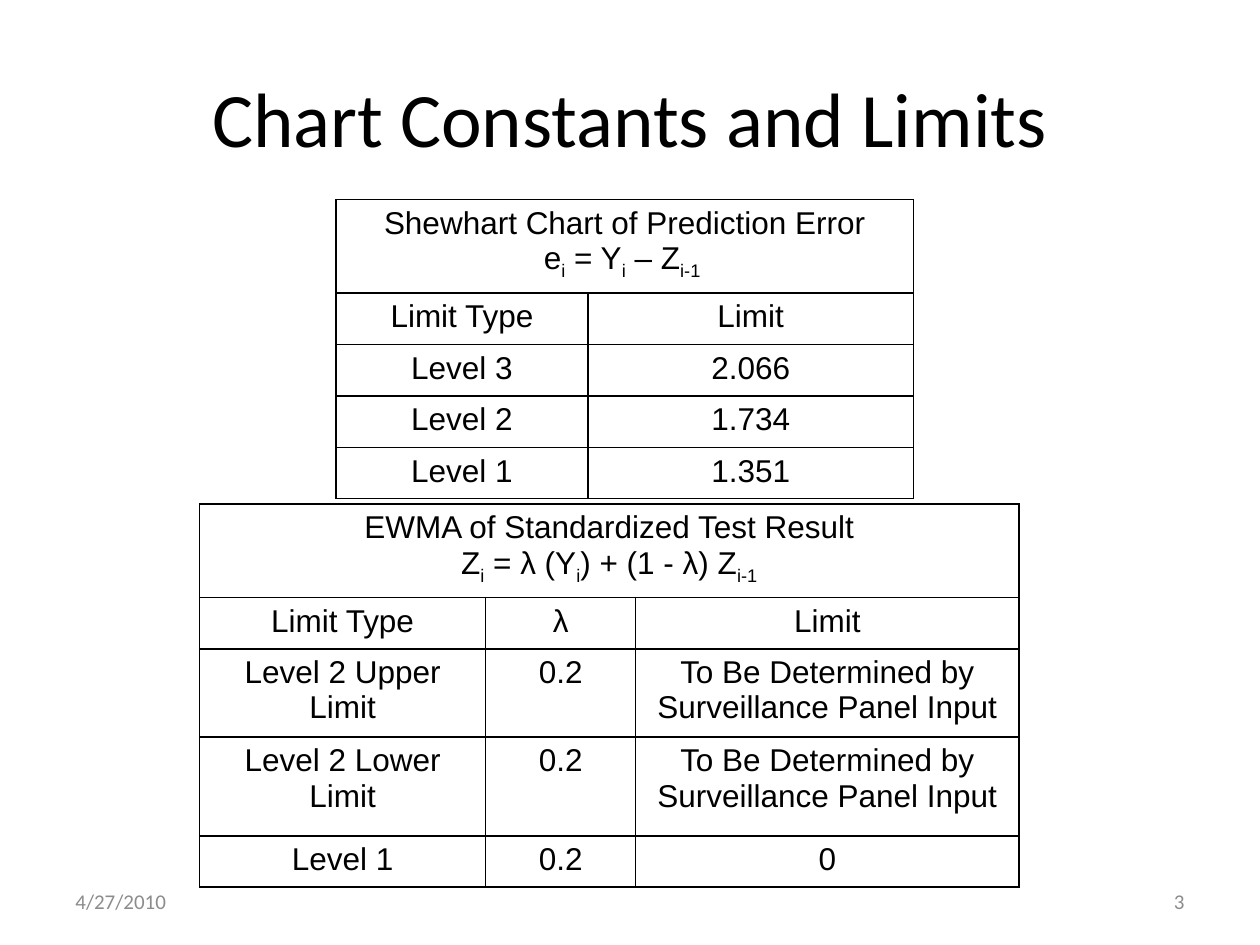
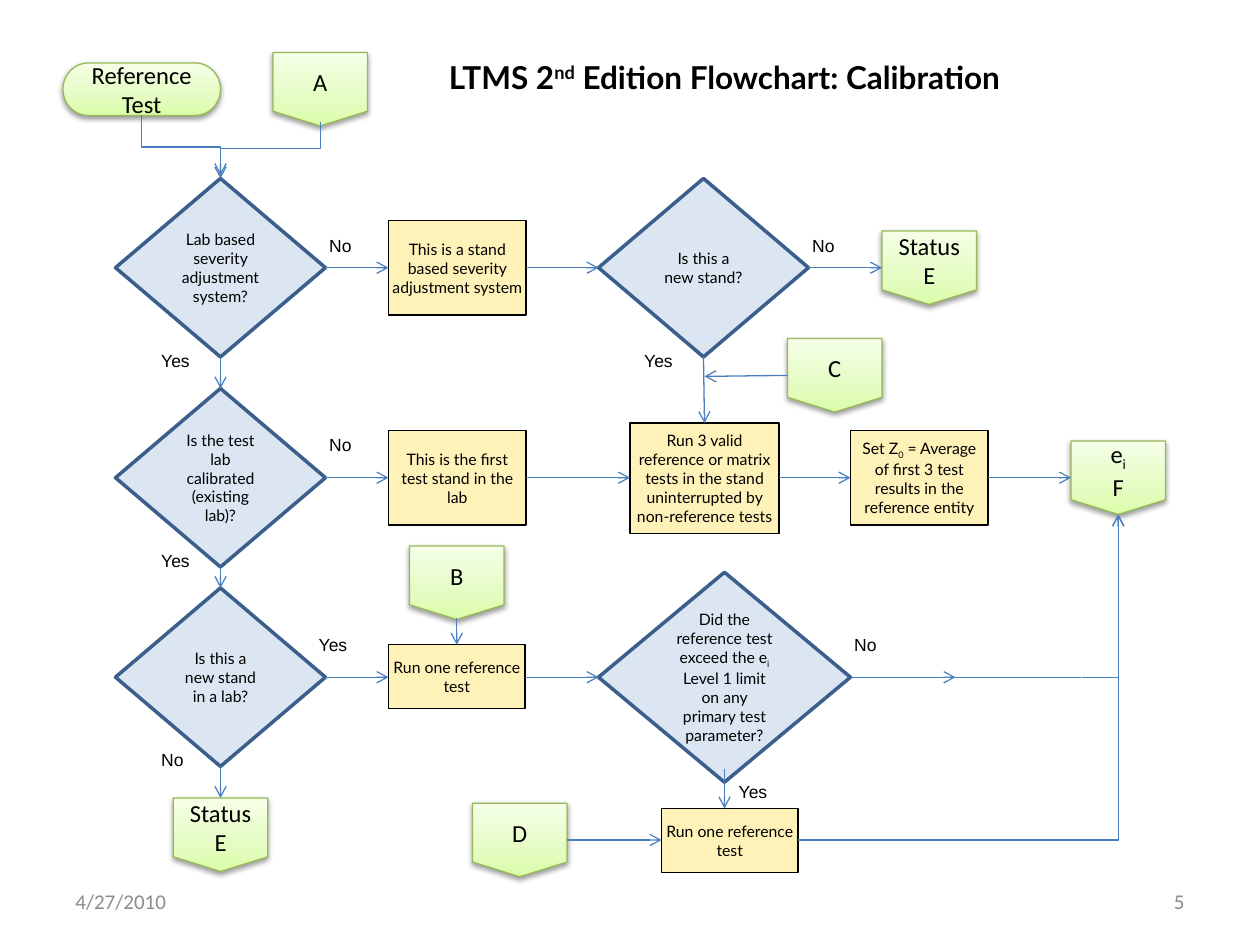
"""Build the chart limits slide and the calibration flowchart slide."""
from copy import deepcopy
from lxml.etree import SubElement
from pptx import Presentation
from pptx.dml.color import RGBColor
from pptx.enum.shapes import MSO_CONNECTOR, MSO_SHAPE
from pptx.enum.text import MSO_ANCHOR, PP_ALIGN
from pptx.oxml.ns import qn
from pptx.util import Emu, Inches, Pt

COLORS = {
    "text": "000000", "footer": "8C8C8C", "paper": "FFFFFF", "process": "FFF2B9",
    "decision": "DCE6F2", "decision_line": "3A5F8C", "link_line": "98B955",
    "arrow": "4B7EBC",
}
LINK_STOPS = [(0, "DAFDA7"), (0.35, "E4FCC2"), (1, "F5FFE7")]
COLUMNS, ROWS = 120, 90
CELL = Inches(10) // COLUMNS

FRAMES = {
    "plain": {"word_wrap": True, "vertical_anchor": MSO_ANCHOR.MIDDLE},
    "label": {"word_wrap": True, "margin_left": Inches(0.03), "margin_top": Inches(0.03),
              "margin_right": 0, "margin_bottom": 0},
    "tight": {"word_wrap": True, "vertical_anchor": MSO_ANCHOR.MIDDLE,
              "margin_left": Inches(0.03), "margin_right": Inches(0.03),
              "margin_top": Inches(0.02), "margin_bottom": Inches(0.02)},
}
CENTER, LEFT, RIGHT = PP_ALIGN.CENTER, PP_ALIGN.LEFT, PP_ALIGN.RIGHT
STYLES = {
    "title": {"font": {"name": "Calibri", "size": Pt(44)}, "align": CENTER, "frame": "plain"},
    "heading": {"font": {"name": "Lato", "size": Pt(18), "bold": True}, "align": CENTER,
                "frame": "tight", "shift": 30000, "shape": MSO_SHAPE.RECTANGLE, "fill": "paper"},
    "date": {"font": {"name": "Calibri", "size": Pt(12)}, "align": LEFT,
             "frame": "plain", "color": "footer"},
    "number": {"font": {"name": "Calibri", "size": Pt(12)}, "align": RIGHT,
               "frame": "plain", "color": "footer"},
    "table": {"font": {"name": "Arial", "size": Pt(18)}, "align": CENTER, "frame": None},
    "label": {"font": {"name": "Arial", "size": Pt(10)}, "align": LEFT, "frame": "label"},
    "process": {"font": {"name": "Lato", "size": Pt(9)}, "align": CENTER, "frame": "tight",
                "shape": MSO_SHAPE.FLOWCHART_PROCESS, "fill": "process",
                "line": ("text", 0.75)},
    "decision": {"font": {"name": "Lato", "size": Pt(9)}, "align": CENTER, "frame": "plain",
                 "shape": MSO_SHAPE.FLOWCHART_DECISION, "fill": "decision",
                 "line": ("decision_line", 2)},
    "link": {"font": {"name": "Calibri", "size": Pt(14)}, "align": CENTER, "frame": "plain",
             "shape": MSO_SHAPE.FLOWCHART_OFFPAGE_CONNECTOR, "fill": "gradient",
             "line": ("link_line", 0.75)},
}
STYLES["terminator"] = {**STYLES["link"], "shape": MSO_SHAPE.FLOWCHART_TERMINATOR}


def grid(*values):
    """Turn grid columns and rows into slide lengths."""
    return [Emu(round(value * CELL)) for value in values]


def write(frame, text, style):
    """Fill a text frame; pieces between bars are raised or lowered."""
    for name, value in FRAMES.get(style["frame"], {}).items():
        setattr(frame, name, value)
    for index, line in enumerate(text.split("\n")):
        paragraph = frame.add_paragraph() if index else frame.paragraphs[0]
        paragraph.alignment = style["align"]
        for position, piece in enumerate(line.split("|")):
            if not piece:
                continue
            run = paragraph.add_run()
            run.text = piece
            for name, value in style["font"].items():
                setattr(run.font, name, value)
            run.font.color.rgb = RGBColor.from_string(COLORS[style.get("color", "text")])
            if position % 2:
                run.font._element.set("baseline", str(style.get("shift", -25000)))


presentation = Presentation()
presentation.slide_width, presentation.slide_height = grid(COLUMNS, ROWS)
limits_slide, flowchart_slide = [
    presentation.slides.add_slide(presentation.slide_layouts[6]) for _ in range(2)]

DIAMOND = (20, 17)
PROCESS = (13.1, 9)
RUN = (13, 6.1)
LINK = (9, 7)
LABEL = (4.8, 2.4)
FOOTER = (28, 4.8)

limits_items = [("title", "Chart Constants and Limits", 6, 3.6, (108, 15))]
flowchart_items = [
    ("process", "Run 3 valid reference or matrix tests in the stand uninterrupted "
                "by non-reference tests", 60, 40.3, (14.2, 10.5)),
    ("heading", "LTMS 2|nd| Edition Flowchart: Calibration", 38, 4.3, (62, 6)),
    ("decision", "Lab based severity adjustment system?", 11, 17, DIAMOND),
    ("decision", "Is the test lab calibrated (existing lab)?", 11, 37, DIAMOND),
    ("decision", "Is this a new stand in a lab?", 11, 56, DIAMOND),
    ("decision", "Is this a new stand?", 57, 17, DIAMOND),
    ("decision", "Did the reference test exceed the e|i| Level 1 limit on any primary "
                 "test parameter?", 57, 54.5, (24, 20)),
    ("process", "Set Z|0| = Average of first 3 test results in the reference entity",
     81, 41, PROCESS),
    ("process", "This is the first test stand in the lab", 37, 41, PROCESS),
    ("process", "This is a stand based severity adjustment system", 37, 21, PROCESS),
    ("process", "Run one reference test", 37, 61.4, RUN),
    ("process", "Run one reference test", 63, 77, RUN),
    ("link", "A", 26, 5, LINK),
    ("link", "Status\nE", 84, 22, LINK),
    ("link", "Status\nE", 16.5, 76, LINK),
    ("link", "C", 75, 32.25, LINK),
    ("link", "B", 39, 52, LINK),
    ("link", "e|i|\nF", 102, 42, LINK),
    ("link", "D", 45, 76.5, LINK),
    ("terminator", "Reference Test", 6, 6, (15, 5)),
]
answers = {
    "Yes": [(15, 33), (30, 60), (15, 52), (61, 33), (70, 74)],
    "No": [(15, 71), (81, 60), (31, 41), (77, 22), (31, 22)],
}
for answer, places in answers.items():
    flowchart_items += [("label", answer, left, top, LABEL) for left, top in places]

for slide, number, items in ((limits_slide, "3", limits_items),
                             (flowchart_slide, "5", flowchart_items)):
    footers = [("date", "4/27/2010", 6, 83.4, FOOTER), ("number", number, 86, 83.4, FOOTER)]
    for kind, text, left, top, size in items + footers:
        style = STYLES[kind]
        box = grid(left, top, *size)
        if "shape" not in style:
            write(slide.shapes.add_textbox(*box).text_frame, text, style)
            continue
        shape = slide.shapes.add_shape(style["shape"], *box)
        shape.shadow.inherit = False
        if style["fill"] == "gradient":
            shape.fill.gradient()
            shape.fill.gradient_angle = 90
            stop_list = shape._element.spPr.find(".//" + qn("a:gsLst"))
            stop_list.append(deepcopy(stop_list[0]))
            for stop, (position, color) in zip(shape.fill.gradient_stops, LINK_STOPS):
                stop.position = position
                stop.color.rgb = RGBColor.from_string(color)
            effects = shape._element.spPr.find(qn("a:effectLst"))
            shadow = SubElement(effects, qn("a:outerShdw"), blurRad=str(Pt(3.1)),
                                dist=str(Pt(1.6)), dir="5400000", rotWithShape="0")
            shadow_color = SubElement(shadow, qn("a:srgbClr"), val=COLORS["text"])
            SubElement(shadow_color, qn("a:alpha"), val="38000")
        else:
            shape.fill.solid()
            shape.fill.fore_color.rgb = RGBColor.from_string(COLORS[style["fill"]])
        if "line" in style:
            color, width = style["line"]
            shape.line.color.rgb = RGBColor.from_string(COLORS[color])
            shape.line.width = Pt(width)
        else:
            shape.line.fill.background()
        write(shape.text_frame, text, style)

PANEL = "To Be Determined by Surveillance Panel Input"
tables = [
    ((32, 19), (24, 31), (8.4, 4.9, 4.9, 4.9, 4.9), [
        ["Shewhart Chart of Prediction Error\ne|i| = Y|i| – Z|i-1 "],
        ["Limit Type", "Limit"],
        ["Level 3", "2.066"],
        ["Level 2", "1.734"],
        ["Level 1", "1.351"]]),
    ((19, 48), (27.25, 14.3, 36.5), (8.4, 4.9, 7.9, 9.4, 4.9), [
        ["EWMA of Standardized Test Result\nZ|i| = λ (Y|i|) + (1 - λ) Z|i-1"],
        ["Limit Type", "λ", "Limit"],
        ["Level 2 Upper Limit", "0.2", PANEL],
        ["Level 2 Lower Limit", "0.2", PANEL],
        ["Level 1", "0.2", "0"]]),
]
for corner, widths, heights, texts in tables:
    table = limits_slide.shapes.add_table(
        len(heights), len(widths), *grid(*corner, sum(widths), sum(heights))).table
    table.first_row = table.horz_banding = False
    for column, width in zip(table.columns, grid(*widths)):
        column.width = width
    for row, height in zip(table.rows, grid(*heights)):
        row.height = height
    for cell in table.iter_cells():
        properties = cell._tc.get_or_add_tcPr()
        for side in ("a:lnL", "a:lnR", "a:lnT", "a:lnB"):
            border = SubElement(properties, qn(side), w=str(Pt(1)))
            fill = SubElement(border, qn("a:solidFill"))
            SubElement(fill, qn("a:srgbClr"), val=COLORS["text"])
        cell.fill.background()
    table.cell(0, 0).merge(table.cell(0, len(widths) - 1))
    for row_index, row_texts in enumerate(texts):
        for column_index, text in enumerate(row_texts):
            write(table.cell(row_index, column_index).text_frame, text, STYLES["table"])

arrows = [
    ("straight", 21, 34, 21, 37), ("straight", 21, 54, 21, 56),
    ("straight", 21, 73, 21, 76), ("straight", 69, 73.2, 69, 77),
    ("straight", 43.5, 58.9, 43.5, 61.4), ("straight", 67, 34, 67.1, 40.3),
    ("straight", 31, 25.5, 37, 25.5), ("straight", 50.1, 25.5, 57, 25.5),
    ("straight", 77, 25.5, 84, 25.5), ("straight", 31, 45.5, 37, 45.5),
    ("straight", 50.1, 45.5, 60, 45.5), ("straight", 74.2, 45.5, 81, 45.5),
    ("straight", 94.1, 45.5, 102, 45.5), ("straight", 31, 64.5, 37, 64.5),
    ("straight", 50, 64.5, 57, 64.5), ("straight", 81, 64.5, 91, 64.5),
    ("plain", 91, 64.5, 103, 64.5), ("straight", 54, 80, 63, 80),
    ("straight", 75, 35.75, 67.1, 35.85),
    ("corner", 76, 80, 106.5, 49), ("corner", 103, 64.5, 106.5, 49),
    ("step", 13.5, 11, 21, 17), ("step", 30.5, 11.65, 21, 16.7),
]
for kind, left, top, right, bottom in arrows:
    ends, turn = (left, top, right, bottom), None
    if kind == "step":
        middle_x, middle_y = (left + right) / 2, (top + bottom) / 2
        half_width, half_height = (bottom - top) / 2, (right - left) / 2
        turn = "16200000" if right > left else "5400000"
        side = -1 if right > left else 1
        ends = (middle_x - side * half_width, middle_y - abs(half_height),
                middle_x + side * half_width, middle_y + abs(half_height))
    bent = kind in ("corner", "step")
    connector = flowchart_slide.shapes.add_connector(
        MSO_CONNECTOR.ELBOW if bent else MSO_CONNECTOR.STRAIGHT, *grid(*ends))
    connector.line.color.rgb = RGBColor.from_string(COLORS["arrow"])
    connector.line.width = Pt(0.75)
    properties = connector._element.spPr
    if turn:
        properties.find(qn("a:xfrm")).set("rot", turn)
    if kind == "corner":
        properties.find(qn("a:prstGeom")).set("prst", "bentConnector2")
    if kind != "plain":
        SubElement(properties.find(qn("a:ln")), qn("a:tailEnd"), type="arrow")
    SubElement(properties, qn("a:effectLst"))

presentation.save("out.pptx")
